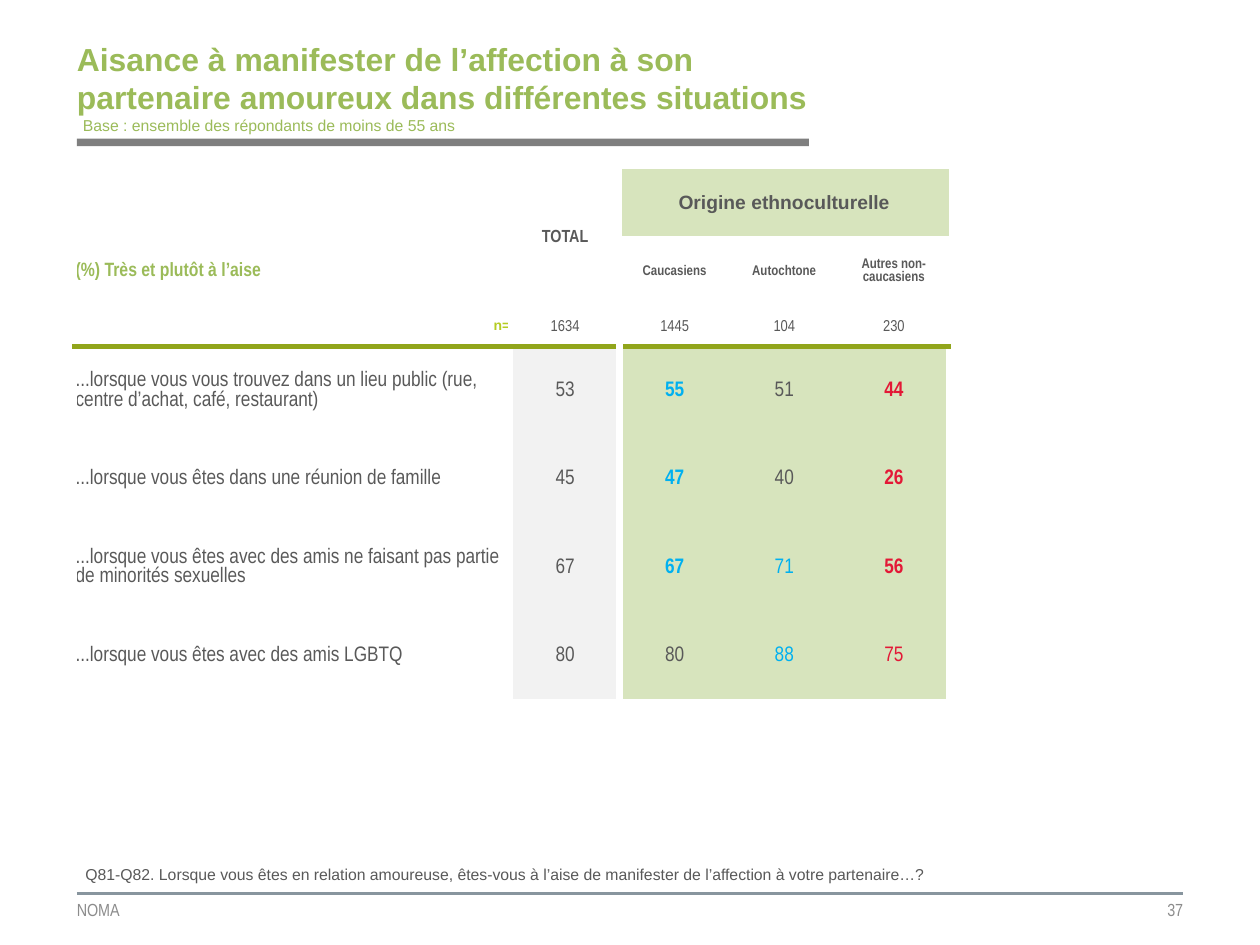
from lxml.etree import SubElement
from pptx import Presentation
from pptx.dml.color import RGBColor
from pptx.enum.shapes import MSO_CONNECTOR as Connector
from pptx.enum.shapes import MSO_SHAPE as Shape
from pptx.enum.text import MSO_ANCHOR as Anchor
from pptx.enum.text import MSO_AUTO_SIZE as AutoSize
from pptx.enum.text import PP_ALIGN as Align
from pptx.oxml.ns import qn
from pptx.util import Inches, Pt

COLORS = {
    "title": "9BBB59", "text": "595959", "footer": "8C8C8C", "bar": "7F7F7F",
    "rule": "88959E", "count": "B5CC22", "header_line": "91A51B", "gap": "FFFFFF",
    "total_fill": "F2F2F2", "origin_fill": "D7E4BD", "higher": "00B0F0", "lower": "E31836",
}
NARROW = "Arial Narrow"
COLUMN_WIDTHS = [3.46] + [0.87] * 4
ROW_HEIGHTS = [0.53, 0.56, 0.32] + [0.7] * 4
HEADER_ROWS = 3
ORIGINS = ["Caucasiens", "Autochtone", "Autres non-caucasiens"]
COUNTS = [1634, 1445, 104, 230]
SITUATIONS = [
    ("...lorsque vous vous trouvez dans un lieu public (rue, centre d’achat, café, restaurant)",
     [(53, "text", False), (55, "higher", True), (51, "text", False), (44, "lower", True)]),
    ("...lorsque vous êtes dans une réunion de famille",
     [(45, "text", False), (47, "higher", True), (40, "text", False), (26, "lower", True)]),
    ("...lorsque vous êtes avec des amis ne faisant pas partie de minorités sexuelles",
     [(67, "text", False), (67, "higher", True), (71, "higher", False), (56, "lower", True)]),
    ("...lorsque vous êtes avec des amis LGBTQ",
     [(80, "text", False), (80, "text", False), (88, "higher", False), (75, "lower", False)]),
]


def rgb(color):
    """Return the named colour."""
    return RGBColor.from_string(COLORS[color])


def write(frame, text, size, color, font="Arial", bold=False, align=Align.LEFT, spacing=None):
    """Put one formatted paragraph in a text frame."""
    frame.text = text
    paragraph = frame.paragraphs[0]
    paragraph.alignment = align
    if spacing:
        paragraph.line_spacing = spacing
    for run in paragraph.runs:
        run.font.size = Pt(size)
        run.font.name = font
        run.font.bold = bold
        run.font.color.rgb = rgb(color)


def set_insets(holder, left, top, right, bottom):
    """Set the four inner margins of a text frame or cell."""
    holder.margin_left, holder.margin_top = Inches(left), Inches(top)
    holder.margin_right, holder.margin_bottom = Inches(right), Inches(bottom)


def add_title(slide, text):
    """Fill and place the title placeholder."""
    title = slide.shapes.title
    title.left, title.top = Inches(0.61), Inches(0.36)
    title.width, title.height = Inches(5.83), Inches(0.69)
    frame = title.text_frame
    frame.auto_size = AutoSize.NONE
    frame.word_wrap = True
    frame.vertical_anchor = Anchor.MIDDLE
    set_insets(frame, 0, 0, 0, 0.17)
    write(frame, text, 18.2, "title", bold=True)


def add_label(slide, box, text, anchor, insets=(0.1, 0.05, 0.1, 0.05), wrap=True, **style):
    """Add a text box."""
    frame = slide.shapes.add_textbox(*map(Inches, box)).text_frame
    frame.word_wrap = wrap
    frame.vertical_anchor = anchor
    set_insets(frame, *insets)
    write(frame, text, **style)


def add_title_bar(slide):
    """Add the grey bar below the title."""
    bar = slide.shapes.add_shape(
        Shape.RECTANGLE, Inches(0.61), Inches(1.1), Inches(5.81), Inches(0.06))
    bar.shadow.inherit = False
    bar.fill.solid()
    bar.fill.fore_color.rgb = rgb("bar")
    bar.line.fill.background()


def add_footer_rule(slide):
    """Add the line above the footer."""
    rule = slide.shapes.add_connector(
        Connector.STRAIGHT, Inches(0.61), Inches(7.09), Inches(9.39), Inches(7.09))
    rule.line.color.rgb = rgb("rule")
    rule.line.width = Pt(1.5)
    SubElement(rule._element.spPr, qn("a:effectLst"))


def set_borders(cell, borders):
    """Draw the listed borders of a cell and hide the others."""
    properties = cell._tc.get_or_add_tcPr()
    for index, side in enumerate("LRTB"):
        color, width = borders.get(side, (None, 0))
        line = SubElement(properties, qn(f"a:ln{side}"), w=str(Pt(width)))
        if color:
            fill = SubElement(line, qn("a:solidFill"))
            SubElement(fill, qn("a:srgbClr"), val=COLORS[color])
        else:
            SubElement(line, qn("a:noFill"))
        properties.insert(index, line)


def cell_borders(row, column):
    """Return the borders that a grid position calls for."""
    wide = 4.5 if row >= HEADER_ROWS else 3
    edges = [3, 3, wide, 0, 0, 3]
    borders = {side: ("gap", width)
               for side, width in zip("LR", edges[column:column + 2]) if width}
    if row == HEADER_ROWS - 1:
        borders["B"] = ("header_line", 3)
    if row == HEADER_ROWS:
        borders["T"] = ("header_line", 3)
    return borders


def fill_color(row, column):
    """Return the colour name of a cell's fill, if it has one."""
    if column >= 2 and (row == 0 or row >= HEADER_ROWS):
        return "origin_fill"
    return "total_fill" if column == 1 and row >= HEADER_ROWS else None


def format_grid(table):
    """Set sizes, fills, insets and borders of all cells."""
    for column, width in zip(table.columns, COLUMN_WIDTHS):
        column.width = Inches(width)
    for row, height in zip(table.rows, ROW_HEIGHTS):
        row.height = Inches(height)
    for row in range(len(ROW_HEIGHTS)):
        for column in range(len(COLUMN_WIDTHS)):
            cell = table.cell(row, column)
            cell.vertical_anchor = Anchor.MIDDLE
            set_insets(cell, 0.01, 0.01, 0.01, 0)
            color = fill_color(row, column)
            if color:
                cell.fill.solid()
                cell.fill.fore_color.rgb = rgb(color)
            else:
                cell.fill.background()
            set_borders(cell, cell_borders(row, column))


def write_cell(table, row, column, text, size, color="text", font=NARROW, bold=False,
               align=Align.CENTER, spacing=None):
    """Write one table cell."""
    write(table.cell(row, column).text_frame, str(text), size, color, font, bold, align, spacing)


def add_comfort_table(slide):
    """Add the table of comfort by ethnocultural origin."""
    table = slide.shapes.add_table(
        len(ROW_HEIGHTS), len(COLUMN_WIDTHS), Inches(0.59), Inches(1.34),
        Inches(sum(COLUMN_WIDTHS)), Inches(sum(ROW_HEIGHTS))).table
    table.first_row = table.horz_banding = False
    format_grid(table)
    table.cell(0, 1).merge(table.cell(1, 1))
    table.cell(0, 2).merge(table.cell(0, 4))
    write_cell(table, 0, 1, "TOTAL", 10, bold=True)
    write_cell(table, 0, 2, "Origine ethnoculturelle", 11, font="Arial", bold=True)
    write_cell(table, 1, 0, "(%) Très et plutôt à l’aise", 11, "title", bold=True,
               align=Align.LEFT, spacing=0.95)
    for column, origin in enumerate(ORIGINS, 2):
        write_cell(table, 1, column, origin, 8, bold=True)
    set_insets(table.cell(2, 0), 0, 0.05, 0, 0.05)
    write_cell(table, 2, 0, "n=", 8, "count", "Arial", True, Align.RIGHT, 0.95)
    for column, count in enumerate(COUNTS, 1):
        write_cell(table, 2, column, count, 9)
    for row, (situation, results) in enumerate(SITUATIONS, HEADER_ROWS):
        write_cell(table, row, 0, situation, 12, align=Align.LEFT)
        for column, (percent, color, bold) in enumerate(results, 1):
            write_cell(table, row, column, percent, 12, color, bold=bold)


def main():
    """Build and save the slide."""
    deck = Presentation()
    deck.slide_width, deck.slide_height = Inches(10), Inches(7.5)
    slide = deck.slides.add_slide(deck.slide_layouts[5])
    add_footer_rule(slide)
    add_title_bar(slide)
    footer = {"anchor": Anchor.MIDDLE, "insets": (0, 0, 0, 0), "size": 10,
              "color": "footer", "font": NARROW}
    add_label(slide, (0.61, 7.09, 2.8, 0.26), "NOMA", **footer)
    add_label(slide, (6.55, 7.09, 2.84, 0.26), "37", align=Align.RIGHT, **footer)
    add_comfort_table(slide)
    add_label(slide, (0.56, 0.87, 3.22, 0.4), "Base : ensemble des répondants de moins de 55 ans",
              Anchor.TOP, wrap=False, size=9, color="title")
    add_title(slide, "Aisance à manifester de l’affection à son partenaire amoureux "
                     "dans différentes situations")
    add_label(slide, (0.58, 6.66, 8.81, 0.4),
              "Q81-Q82. Lorsque vous êtes en relation amoureuse, êtes-vous à l’aise de "
              "manifester de l’affection à votre partenaire…?",
              Anchor.BOTTOM, size=9, color="text")
    deck.save("out.pptx")


if __name__ == "__main__":
    main()
